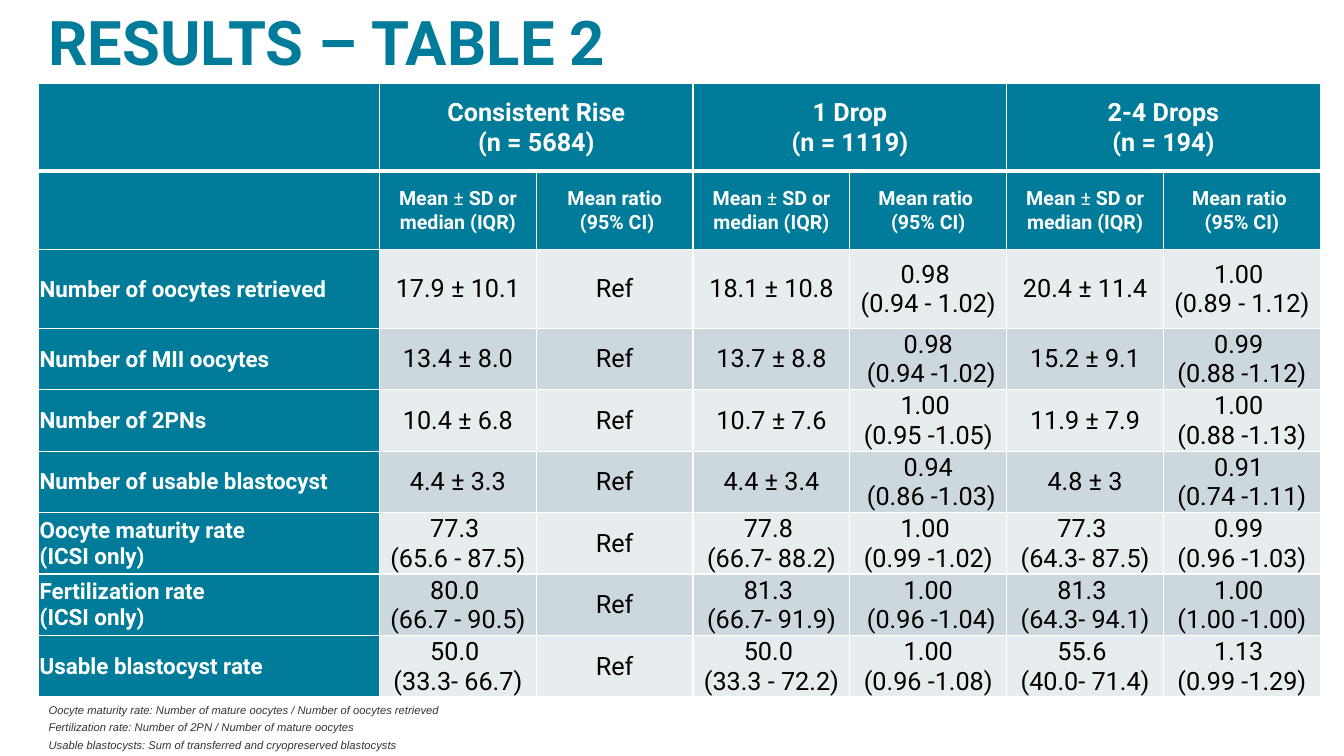
from typing import NamedTuple

from lxml import etree
from pptx import Presentation
from pptx.dml.color import RGBColor
from pptx.enum.text import MSO_ANCHOR, PP_ALIGN
from pptx.oxml.ns import qn
from pptx.util import Pt

LEFT, CENTER = PP_ALIGN.LEFT, PP_ALIGN.CENTER
TOP, MIDDLE, BOTTOM = MSO_ANCHOR.TOP, MSO_ANCHOR.MIDDLE, MSO_ANCHOR.BOTTOM
COLORS = {"teal": "007C9A", "white": "FFFFFF", "black": "000000",
          "gray": "333333", "light": "E7ECEF", "dark": "CCD7DE"}


class Group(NamedTuple):
    name: str
    count: int
    ratio: str


class Outcome(NamedTuple):
    label: str
    values: tuple[str, ...]  # rise mean, drop mean, drop ratio, drops mean, drops ratio


class TextBox(NamedTuple):
    text: str
    left: float
    top: float
    width: float
    height: float
    fill: str
    style: dict


GROUPS = [Group("Consistent Rise", 5684, "Mean ratio\n (95% CI)"),
          Group("1 Drop", 1119, "Mean ratio \n(95% CI)"),
          Group("2-4 Drops", 194, "Mean ratio \n(95% CI)")]
# A bar switches between bold and regular text
MEAN = "Mean |± |SD or median (IQR)"
OUTCOMES = [
    Outcome("Number of oocytes retrieved", (
        "17.9 ± 10.1", "18.1 ± 10.8", "0.98 \n(0.94 - 1.02)",
        "20.4 ± 11.4", "1.00 \n(0.89 - 1.12)")),
    Outcome("Number of MII oocytes", (
        "13.4 ± 8.0", "13.7 ± 8.8", "0.98\n (0.94 -1.02)",
        "15.2 ± 9.1", "0.99 \n(0.88 -1.12)")),
    Outcome("Number of 2PNs", (
        "10.4 ± 6.8", "10.7 ± 7.6", "1.00 \n(0.95 -1.05)",
        "11.9 ± 7.9", "1.00 \n(0.88 -1.13)")),
    Outcome("Number of usable blastocyst", (
        "4.4 ± 3.3", "4.4 ± 3.4", "0.94\n (0.86 -1.03)",
        "4.8 ± 3", "0.91 \n(0.74 -1.11)")),
    Outcome("Oocyte maturity rate\n(ICSI only)", (
        "77.3 \n(65.6 - 87.5)", "77.8 \n(66.7- 88.2)", "1.00 \n(0.99 -1.02)",
        "77.3 \n(64.3- 87.5)", "0.99 \n(0.96 -1.03)")),
    Outcome("Fertilization rate\n(ICSI only)", (
        "80.0 \n(66.7 - 90.5)", "81.3 \n(66.7- 91.9)", "1.00\n (0.96 -1.04)",
        "81.3 \n(64.3- 94.1)", "1.00 \n(1.00 -1.00)")),
    Outcome("Usable blastocyst rate", (
        "50.0 \n(33.3- 66.7)", "50.0 \n(33.3 - 72.2)", "1.00\n(0.96 -1.08)",
        "55.6 \n(40.0- 71.4)", "1.13 \n(0.99 -1.29)")),
]
TEXT_BOXES = [
    TextBox("Oocyte maturity rate: Number of mature oocytes / Number of oocytes retrieved\n"
            "Fertilization rate: Number of 2PN / Number of mature oocytes\n"
            "Usable blastocysts: Sum of transferred and cryopreserved blastocysts",
            27.7, 496.8, 924.5, 43.2, "white",
            dict(size=8, color="gray", font="Arial", italic=True,
                 line_spacing=1.2, space_before=1)),
    TextBox("RESULTS – TABLE 2", 27.7, -29.5, 863.3, 89.3, "",
            dict(size=44, color="teal", bold=True, anchor=BOTTOM, line_spacing=0.9)),
]
COLUMN_WIDTHS = [243.4] + [112] * 6
ROW_HEIGHTS = [62.4, 56.1, 56.1] + [43.7] * 6


def paint(target, color: str) -> None:
    target.fill.solid()
    target.fill.fore_color.rgb = RGBColor.from_string(COLORS[color])


def write(frame, text: str, *, size: float, color: str, font: str = "Roboto",
          bold: bool = False, italic: bool = False, align=LEFT, anchor=TOP,
          line_spacing: float = 1.0, space_before: float = 0) -> None:
    """Fill a text frame, one paragraph per line of text."""
    frame.word_wrap = True
    frame.vertical_anchor = anchor
    for number, line in enumerate(text.split("\n")):
        para = frame.add_paragraph() if number else frame.paragraphs[0]
        para.alignment = align
        para.line_spacing = line_spacing
        if number:
            para.space_before = Pt(space_before)
        for part, words in enumerate(line.split("|")):
            span = para.add_run()
            span.text = words
            span.font.name = font
            span.font.size = Pt(size)
            span.font.bold = bold and part % 2 == 0
            span.font.italic = italic
            span.font.color.rgb = RGBColor.from_string(COLORS[color])


def add_borders(cell, top: float = 1, bottom: float = 1) -> None:
    """Give a cell white borders."""
    properties = cell._tc.get_or_add_tcPr()
    widths = {"a:lnL": 1, "a:lnR": 1, "a:lnT": top, "a:lnB": bottom}
    for place, (tag, width) in enumerate(widths.items()):
        border = etree.Element(qn(tag), w=str(Pt(width)))
        fill = etree.SubElement(border, qn("a:solidFill"))
        etree.SubElement(fill, qn("a:srgbClr"), val=COLORS["white"])
        properties.insert(place, border)


def fill_cell(cell, text: str, fill: str, margin: float = 0.7, **style) -> None:
    paint(cell, fill)
    cell.margin_left = cell.margin_right = Pt(margin)
    cell.margin_top, cell.margin_bottom = Pt(0.7), Pt(0)
    cell.vertical_anchor = MIDDLE
    if text:
        write(cell.text_frame, text, anchor=MIDDLE, **style)


def add_results(page) -> None:
    table = page.shapes.add_table(
        len(ROW_HEIGHTS), len(COLUMN_WIDTHS), Pt(27.7), Pt(59.8),
        Pt(sum(COLUMN_WIDTHS)), Pt(sum(ROW_HEIGHTS))).table
    table.first_row = table.horz_banding = False
    for column, width in zip(table.columns, COLUMN_WIDTHS):
        column.width = Pt(width)
    for row, height in zip(table.rows, ROW_HEIGHTS):
        row.height = Pt(height)

    # Two header rows
    heading = dict(color="white", bold=True, align=CENTER)
    for row in range(2):
        fill_cell(table.cell(row, 0), "", "teal", size=14, **heading)
    for number, group in enumerate(GROUPS):
        first = 1 + 2 * number
        table.cell(0, first).merge(table.cell(0, first + 1))
        fill_cell(table.cell(0, first), f"{group.name}\n(n = {group.count})", "teal",
                  margin=5, size=18, **heading)
        for offset, measure in enumerate((MEAN, group.ratio)):
            fill_cell(table.cell(1, first + offset), measure, "teal", size=14, **heading)

    # Outcome rows, banded; the first group is the reference
    for row, outcome in enumerate(OUTCOMES, start=2):
        band = "dark" if row % 2 else "light"
        fill_cell(table.cell(row, 0), outcome.label, "teal",
                  size=16, color="white", bold=True)
        values = (outcome.values[0], "Ref", *outcome.values[1:])
        for column, value in enumerate(values, start=1):
            fill_cell(table.cell(row, column), value, band,
                      size=18, color="black", align=CENTER)

    # White grid, heavier below the group names
    for row in range(len(ROW_HEIGHTS)):
        for column in range(len(COLUMN_WIDTHS)):
            add_borders(table.cell(row, column), top=3 if row == 1 else 1,
                        bottom=3 if row == 0 else 1)


def add_text_box(page, item: TextBox) -> None:
    box = page.shapes.add_textbox(Pt(item.left), Pt(item.top), Pt(item.width), Pt(item.height))
    if item.fill:
        paint(box, item.fill)
    write(box.text_frame, item.text, **item.style)


def main() -> None:
    deck = Presentation()
    deck.slide_width, deck.slide_height = Pt(960), Pt(540)
    page = deck.slides.add_slide(deck.slide_layouts[6])
    for item in TEXT_BOXES:
        add_text_box(page, item)
    add_results(page)
    deck.save("out.pptx")


if __name__ == "__main__":
    main()
